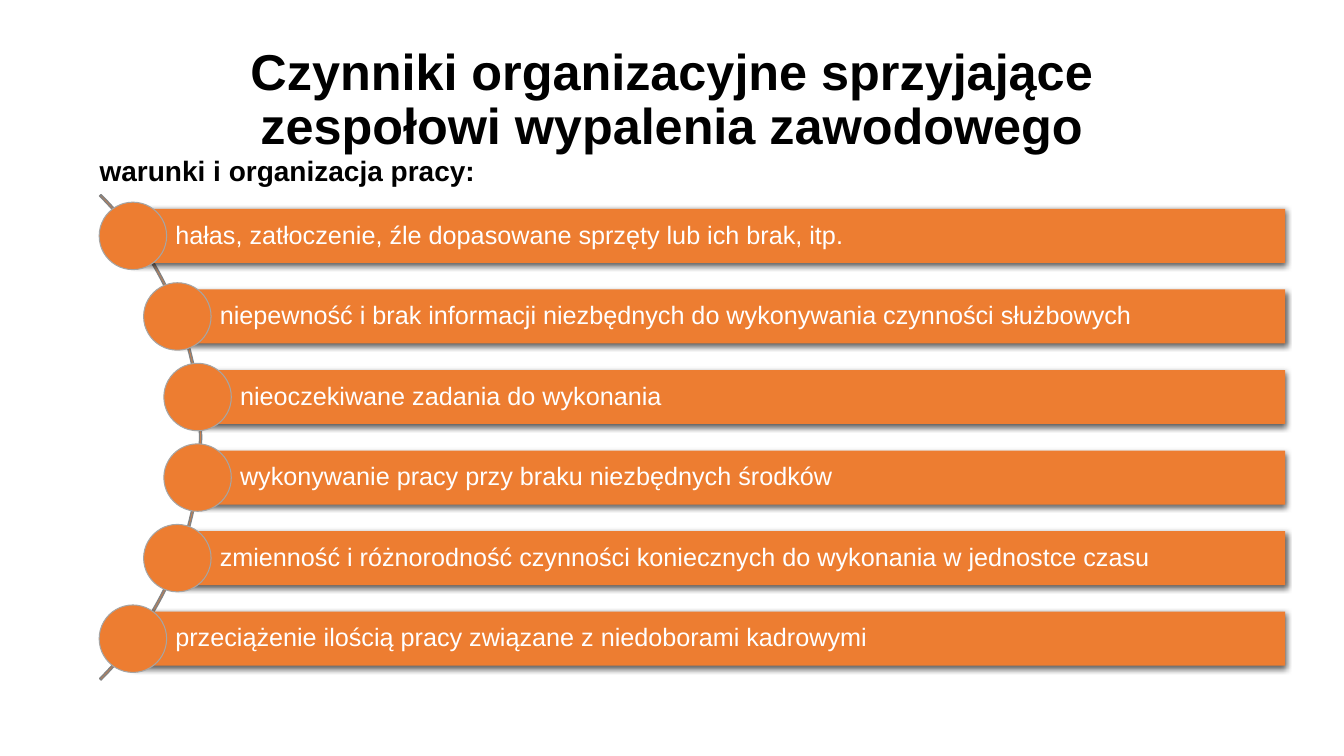
import dataclasses

import lxml.etree
import pptx
import pptx.dml.color
import pptx.enum.shapes
import pptx.enum.text
import pptx.oxml
import pptx.oxml.ns
import pptx.util

Cm = pptx.util.Cm
Pt = pptx.util.Pt
Shape = pptx.enum.shapes.MSO_SHAPE
Anchor = pptx.enum.text.MSO_ANCHOR
Align = pptx.enum.text.PP_ALIGN


@dataclasses.dataclass(frozen=True)
class Theme:
    font: str = "Arial"
    text: str = "000000"
    bar_text: str = "FFFFFF"
    accent: str = "ED7D31"
    circle_line: str = "A5A5A5"
    arc_line: str = "828282"
    shadow: str = "000000"
    title_size: int = 36
    subtitle_size: int = 20
    bar_size: int = 18


class SlideBuilder:
    def __init__(self, slide, theme):
        self.slide = slide
        self.theme = theme

    def set_text(self, shape, text, size, color, bold=False, align=Align.LEFT,
                 anchor=Anchor.MIDDLE, insets=(0.25, 0.13, 0.25, 0.13)):
        frame = shape.text_frame
        frame.word_wrap = True
        frame.auto_size = pptx.enum.text.MSO_AUTO_SIZE.NONE
        frame.vertical_anchor = anchor
        frame.margin_left, frame.margin_top, frame.margin_right, frame.margin_bottom = map(Cm, insets)
        paragraph = frame.paragraphs[0]
        paragraph.alignment = align
        paragraph.line_spacing = 0.9
        paragraph.space_before = Pt(0)
        run = paragraph.add_run()
        run.text = text
        run.font.name = self.theme.font
        run.font.size = Pt(size)
        run.font.bold = bold
        run.font.color.rgb = pptx.dml.color.RGBColor.from_string(color)

    def place(self, placeholder, left, top, width, height):
        placeholder.left, placeholder.top = Cm(left), Cm(top)
        placeholder.width, placeholder.height = Cm(width), Cm(height)

    def title(self, text, *box):
        placeholder = self.slide.shapes.title
        self.place(placeholder, *box)
        self.set_text(placeholder, text, self.theme.title_size, self.theme.text,
                      bold=True, align=Align.CENTER, insets=(1.5, 0.13, 1.5, 0.13))

    def subtitle(self, text, *box):
        placeholder = self.slide.placeholders[1]
        self.place(placeholder, *box)
        properties = placeholder.text_frame.paragraphs[0]._p.get_or_add_pPr()
        properties.set("marL", "0")
        properties.set("indent", "0")
        lxml.etree.SubElement(properties, pptx.oxml.ns.qn("a:buNone"))
        self.set_text(placeholder, text, self.theme.subtitle_size, self.theme.text,
                      bold=True, anchor=Anchor.TOP)

    def shape(self, preset, left, top, width, height, line=None, line_width=0):
        shape = self.slide.shapes.add_shape(preset, Cm(left), Cm(top), Cm(width), Cm(height))
        shape.fill.solid()
        shape.fill.fore_color.rgb = pptx.dml.color.RGBColor.from_string(self.theme.accent)
        if line:
            shape.line.color.rgb = pptx.dml.color.RGBColor.from_string(line)
            shape.line.width = Pt(line_width)
        else:
            shape.line.fill.background()
        shape.shadow.inherit = False
        return shape

    def arc(self, center_x, center_y, radius):
        arc = self.shape(Shape.BLOCK_ARC, center_x - radius, center_y - radius,
                         2 * radius, 2 * radius, self.theme.arc_line, 1)
        for index, value in enumerate((189, 27, 0.003)):
            arc.adjustments[index] = value

    def drop_shadow(self, shape):
        effects = shape._element.spPr.find(pptx.oxml.ns.qn("a:effectLst"))
        effects.append(pptx.oxml.parse_xml(
            f'<a:outerShdw {pptx.oxml.ns.nsdecls("a")} blurRad="{Pt(4.5)}" dist="{Pt(1.5)}" '
            f'dir="5400000" algn="ctr" rotWithShape="0"><a:srgbClr val="{self.theme.shadow}">'
            '<a:alpha val="63000"/></a:srgbClr></a:outerShdw>'))

    def bar(self, text, left, middle, right, height, diameter):
        bar = self.shape(Shape.RECTANGLE, left, middle - height / 2, right - left, height)
        self.drop_shadow(bar)
        self.set_text(bar, text, self.theme.bar_size, self.theme.bar_text,
                      insets=(1.07, 0.15, 0.15, 0.15))
        self.shape(Shape.OVAL, left - diameter / 2, middle - diameter / 2,
                   diameter, diameter, self.theme.circle_line, 0.75)


FACTORS = (
    "hałas, zatłoczenie, źle dopasowane sprzęty lub ich brak, itp.",
    "niepewność i brak informacji niezbędnych do wykonywania czynności służbowych",
    "nieoczekiwane zadania do wykonania",
    "wykonywanie pracy przy braku niezbędnych środków",
    "zmienność i różnorodność czynności koniecznych do wykonania w jednostce czasu",
    "przeciążenie ilością pracy związane z niedoborami kadrowymi",
)
UPPER_LEFTS = (3.35, 4.47, 4.98)
ARC_MIDDLE = 11.02
BAR_STEP = 2.03


def main():
    presentation = pptx.Presentation()
    presentation.slide_width = Cm(33.87)
    presentation.slide_height = Cm(19.05)
    slide = presentation.slides.add_slide(presentation.slide_layouts[1])
    builder = SlideBuilder(slide, Theme())

    builder.title("Czynniki organizacyjne sprzyjające zespołowi wypalenia zawodowego",
                  2.33, 0.56, 29.21, 3.99)
    builder.subtitle("warunki i organizacja pracy:", 2.26, 3.84, 29.21, 1.68)
    builder.arc(-3.57, ARC_MIDDLE, 8.65)
    lefts = UPPER_LEFTS + UPPER_LEFTS[::-1]
    first_middle = ARC_MIDDLE - BAR_STEP * (len(FACTORS) - 1) / 2
    for index, (text, left) in enumerate(zip(FACTORS, lefts)):
        builder.bar(text, left, first_middle + index * BAR_STEP,
                    right=32.39, height=1.36, diameter=1.7)

    presentation.save("out.pptx")


if __name__ == "__main__":
    main()
